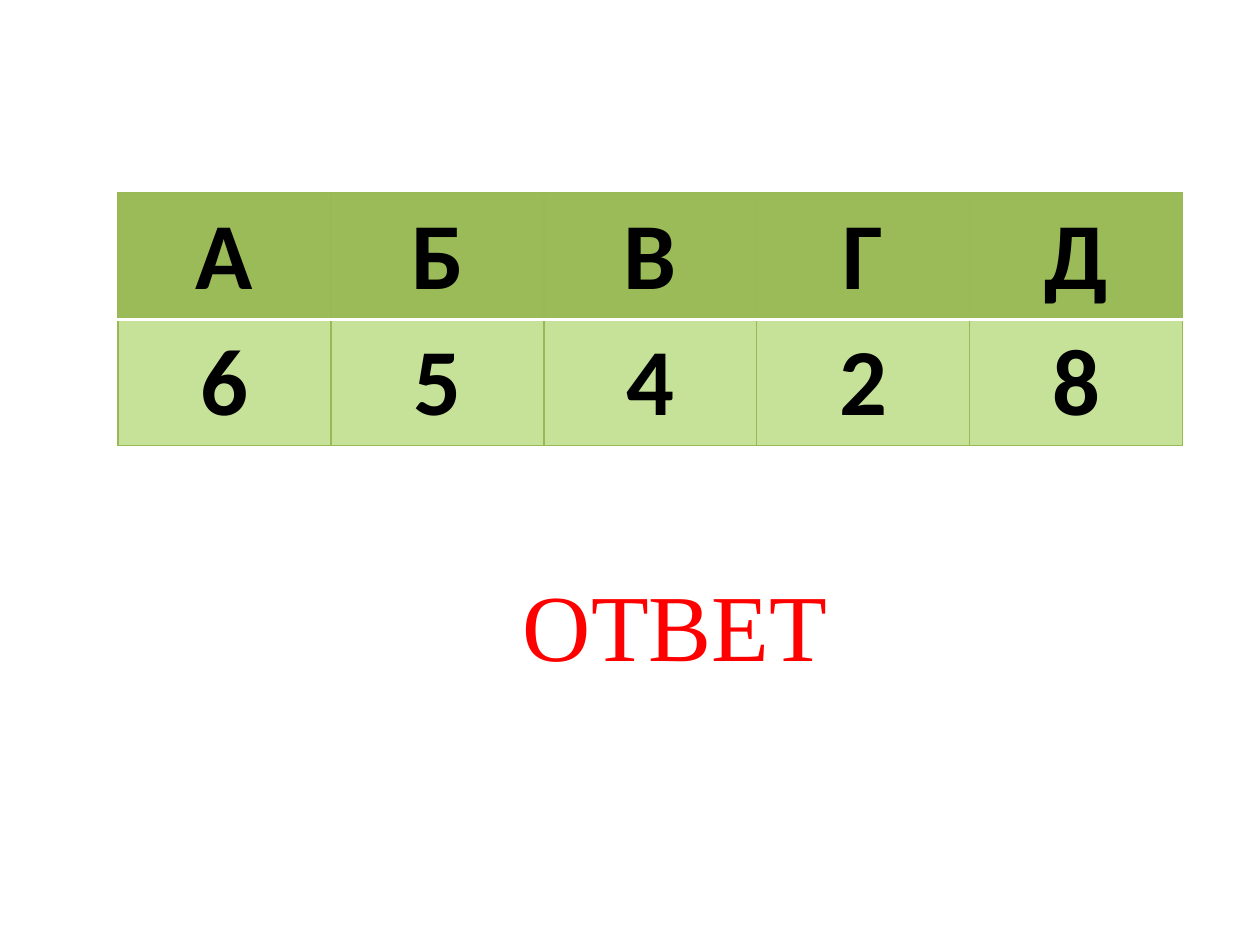
"""Build a slide with a table of answers and a caption."""
from dataclasses import dataclass

from lxml.etree import SubElement
from pptx import Presentation
from pptx.dml.color import RGBColor
from pptx.enum.text import MSO_ANCHOR, PP_ALIGN
from pptx.oxml.ns import qn
from pptx.util import Emu, Pt

PX_PER_INCH = 126
GREEN, LIGHT, LINE = "9BBB59", "C6E298", "98B955"
BLACK, WHITE, RED = "000000", "FFFFFF", "FF0000"


@dataclass(frozen=True)
class Row:
    texts: str
    fill: str
    top: tuple[str, float]
    bottom: tuple[str, float]


RULE, DIVIDER = (LINE, 0.75), (WHITE, 2)
ROWS = [
    Row("АБВГД", GREEN, RULE, DIVIDER),
    Row("65428", LIGHT, DIVIDER, RULE),
]


def px(n: int) -> Emu:
    return Emu(round(n * 914400 / PX_PER_INCH))


def rgb(color: str) -> RGBColor:
    return RGBColor.from_string(color)


def add_run(p, text: str, font: str, color: str, bold: bool = False) -> None:
    r = p.add_run()
    r.text = text
    r.font.name, r.font.size, r.font.bold = font, Pt(54), bold
    r.font.color.rgb = rgb(color)


def set_borders(cell, row: Row) -> None:
    tc_pr = cell._tc.get_or_add_tcPr()
    sides = [("lnL", RULE), ("lnR", RULE), ("lnT", row.top), ("lnB", row.bottom)]
    for i, (tag, (color, width)) in enumerate(sides):
        ln = SubElement(tc_pr, qn(f"a:{tag}"), w=str(Pt(width)))
        fill = SubElement(ln, qn("a:solidFill"))
        SubElement(fill, qn("a:srgbClr"), val=color)
        tc_pr.insert(i, ln)


def add_answers(slide, x: int, y: int, col_w: int, row_h: int) -> None:
    cols = len(ROWS[0].texts)
    frame = slide.shapes.add_table(
        len(ROWS), cols, px(x), px(y), px(col_w * cols), px(row_h * len(ROWS))
    )
    table = frame.table
    for i, row in enumerate(ROWS):
        for j, text in enumerate(row.texts):
            cell = table.cell(i, j)
            cell.fill.solid()
            cell.fill.fore_color.rgb = rgb(row.fill)
            set_borders(cell, row)
            p = cell.text_frame.paragraphs[0]
            p.alignment = PP_ALIGN.CENTER
            add_run(p, text, "Calibri", BLACK, bold=True)


def add_caption(slide, x: int, y: int, w: int, h: int, inset: int) -> None:
    tf = slide.shapes.add_textbox(px(x), px(y), px(w), px(h)).text_frame
    tf.word_wrap = True
    tf.vertical_anchor = MSO_ANCHOR.TOP
    tf.margin_left = px(inset)
    add_run(tf.paragraphs[0], "ОТВЕТ", "Times New Roman", RED)


def main() -> None:
    prs = Presentation()
    prs.slide_width, prs.slide_height = px(1260), px(945)
    slide = prs.slides.add_slide(prs.slide_layouts[6])
    add_caption(slide, 236, 561, 876, 127, inset=287)
    add_answers(slide, 118, 193, col_w=213, row_h=126)
    prs.save("out.pptx")


if __name__ == "__main__":
    main()
